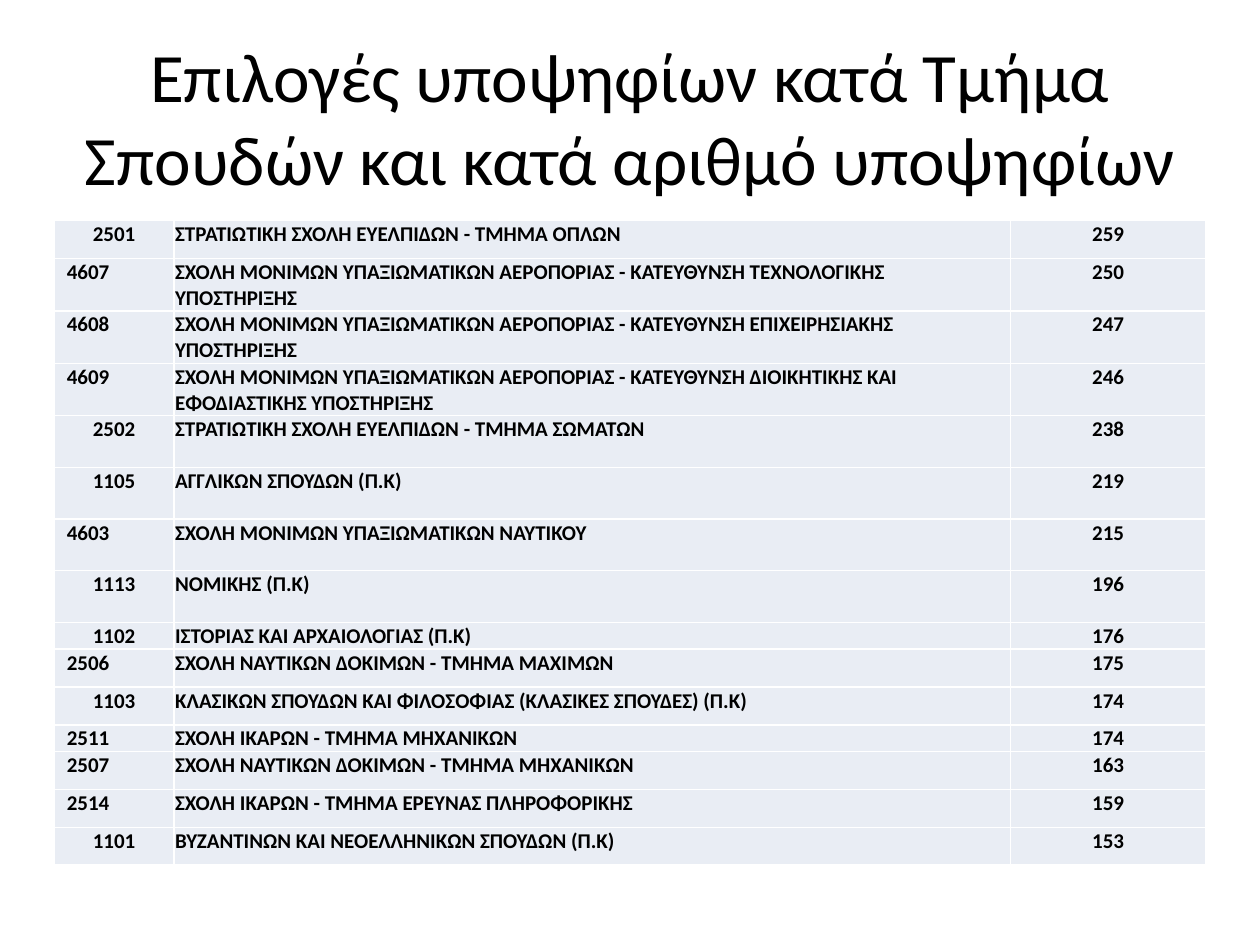
"""Build a slide with a table of candidate choices per department."""
from lxml.etree import SubElement
from pptx import Presentation
from pptx.dml.color import RGBColor
from pptx.enum.text import MSO_ANCHOR as Anchor, PP_ALIGN as Align
from pptx.oxml.ns import qn
from pptx.util import Inches, Pt

INK, PAPER, BAND = "000000", "FFFFFF", "E9EDF4"
COLUMN_WIDTHS = (0.95, 6.64, 1.55)
SHORT, MEDIUM, TALL = 0.19, 0.3, 0.41
INDENTED_CODES = {"4607", "4608", "4609", "4603", "2506", "2511", "2507", "2514"}
NCO_SCHOOL = "ΣΧΟΛΗ ΜΟΝΙΜΩΝ ΥΠΑΞΙΩΜΑΤΙΚΩΝ"
TITLE_LINES = ("Επιλογές υποψηφίων κατά Τμήμα", "Σπουδών και κατά αριθμό υποψηφίων")
DEPARTMENTS = (
    ("2501", "ΣΤΡΑΤΙΩΤΙΚΗ ΣΧΟΛΗ ΕΥΕΛΠΙΔΩΝ - ΤΜΗΜΑ ΟΠΛΩΝ", "259", MEDIUM),
    ("4607", f"{NCO_SCHOOL} ΑΕΡΟΠΟΡΙΑΣ - ΚΑΤΕΥΘΥΝΣΗ ΤΕΧΝΟΛΟΓΙΚΗΣ ΥΠΟΣΤΗΡΙΞΗΣ", "250", MEDIUM),
    ("4608", f"{NCO_SCHOOL} ΑΕΡΟΠΟΡΙΑΣ - ΚΑΤΕΥΘΥΝΣΗ ΕΠΙΧΕΙΡΗΣΙΑΚΗΣ ΥΠΟΣΤΗΡΙΞΗΣ", "247", TALL),
    ("4609", f"{NCO_SCHOOL} ΑΕΡΟΠΟΡΙΑΣ - ΚΑΤΕΥΘΥΝΣΗ ΔΙΟΙΚΗΤΙΚΗΣ ΚΑΙ ΕΦΟΔΙΑΣΤΙΚΗΣ ΥΠΟΣΤΗΡΙΞΗΣ", "246", TALL),
    ("2502", "ΣΤΡΑΤΙΩΤΙΚΗ ΣΧΟΛΗ ΕΥΕΛΠΙΔΩΝ - ΤΜΗΜΑ ΣΩΜΑΤΩΝ", "238", TALL),
    ("1105", "ΑΓΓΛΙΚΩΝ ΣΠΟΥΔΩΝ (Π.Κ)", "219", TALL),
    ("4603", f"{NCO_SCHOOL} ΝΑΥΤΙΚΟΥ", "215", TALL),
    ("1113", "ΝΟΜΙΚΗΣ (Π.Κ)", "196", TALL),
    ("1102", "ΙΣΤΟΡΙΑΣ ΚΑΙ ΑΡΧΑΙΟΛΟΓΙΑΣ (Π.Κ)", "176", SHORT),
    ("2506", "ΣΧΟΛΗ ΝΑΥΤΙΚΩΝ ΔΟΚΙΜΩΝ - ΤΜΗΜΑ ΜΑΧΙΜΩΝ", "175", MEDIUM),
    ("1103", "ΚΛΑΣΙΚΩΝ ΣΠΟΥΔΩΝ ΚΑΙ ΦΙΛΟΣΟΦΙΑΣ (ΚΛΑΣΙΚΕΣ ΣΠΟΥΔΕΣ) (Π.Κ)", "174", MEDIUM),
    ("2511", "ΣΧΟΛΗ ΙΚΑΡΩΝ - ΤΜΗΜΑ ΜΗΧΑΝΙΚΩΝ", "174", SHORT),
    ("2507", "ΣΧΟΛΗ ΝΑΥΤΙΚΩΝ ΔΟΚΙΜΩΝ - ΤΜΗΜΑ ΜΗΧΑΝΙΚΩΝ", "163", MEDIUM),
    ("2514", "ΣΧΟΛΗ ΙΚΑΡΩΝ - ΤΜΗΜΑ ΕΡΕΥΝΑΣ ΠΛΗΡΟΦΟΡΙΚΗΣ", "159", MEDIUM),
    ("1101", "ΒΥΖΑΝΤΙΝΩΝ ΚΑΙ ΝΕΟΕΛΛΗΝΙΚΩΝ ΣΠΟΥΔΩΝ (Π.Κ)", "153", MEDIUM),
)


def color(code):
    return RGBColor.from_string(code)


class DepartmentSlide:
    def __init__(self, deck, font="Calibri"):
        self.slide = deck.slides.add_slide(deck.slide_layouts[5])
        self.font = font

    def add_text(self, paragraph, text, size, bold=False):
        run = paragraph.add_run()
        run.text = text
        run.font.name, run.font.size, run.font.bold = self.font, Pt(size), bold
        run.font.color.rgb = color(INK)

    def title(self, lines, left, top, width, height):
        heading = self.slide.shapes.title
        heading.left, heading.top = Inches(left), Inches(top)
        heading.width, heading.height = Inches(width), Inches(height)
        heading.text_frame.vertical_anchor = Anchor.MIDDLE
        paragraph = heading.text_frame.paragraphs[0]
        paragraph.alignment = Align.CENTER
        for number, line in enumerate(lines):
            if number:
                paragraph.add_line_break()
            self.add_text(paragraph, line, 39.6)

    def borders(self, cell):
        properties = cell._tc.get_or_add_tcPr()
        for position, side in enumerate(("lnL", "lnR", "lnT", "lnB")):
            border = properties.makeelement(qn(f"a:{side}"), {"w": str(Pt(1))})
            fill = SubElement(border, qn("a:solidFill"))
            SubElement(fill, qn("a:srgbClr"), val=PAPER)
            properties.insert(position, border)

    def cell(self, cell, text, alignment, indent):
        cell.margin_left = Inches(indent)
        cell.margin_top = cell.margin_right = Inches(0.01)
        cell.margin_bottom = 0
        cell.fill.solid()
        cell.fill.fore_color.rgb = color(BAND)
        self.borders(cell)
        paragraph = cell.text_frame.paragraphs[0]
        paragraph.alignment = alignment
        self.add_text(paragraph, text, 12, bold=True)

    def table(self, departments, left, top):
        width, height = sum(COLUMN_WIDTHS), sum(row[-1] for row in departments)
        table = self.slide.shapes.add_table(
            len(departments), len(COLUMN_WIDTHS),
            Inches(left), Inches(top), Inches(width), Inches(height)).table
        table.first_row = table.horz_banding = False
        for column, column_width in zip(table.columns, COLUMN_WIDTHS):
            column.width = Inches(column_width)
        for row, (code, department, candidates, row_height) in zip(table.rows, departments):
            row.height = Inches(row_height)
            indented = code in INDENTED_CODES
            code_cell, department_cell, candidates_cell = row.cells
            self.cell(code_cell, code, Align.LEFT if indented else Align.CENTER,
                      0.1 if indented else 0.01)
            self.cell(department_cell, department, Align.LEFT, 0.01)
            self.cell(candidates_cell, candidates, Align.CENTER, 0.01)


def main():
    deck = Presentation()
    deck.slide_width, deck.slide_height = Inches(10), Inches(7.5)
    choices = DepartmentSlide(deck)
    choices.title(TITLE_LINES, 0.5, 0.3, 9, 1.25)
    choices.table(DEPARTMENTS, 0.43, 1.75)
    deck.save("out.pptx")


if __name__ == "__main__":
    main()
